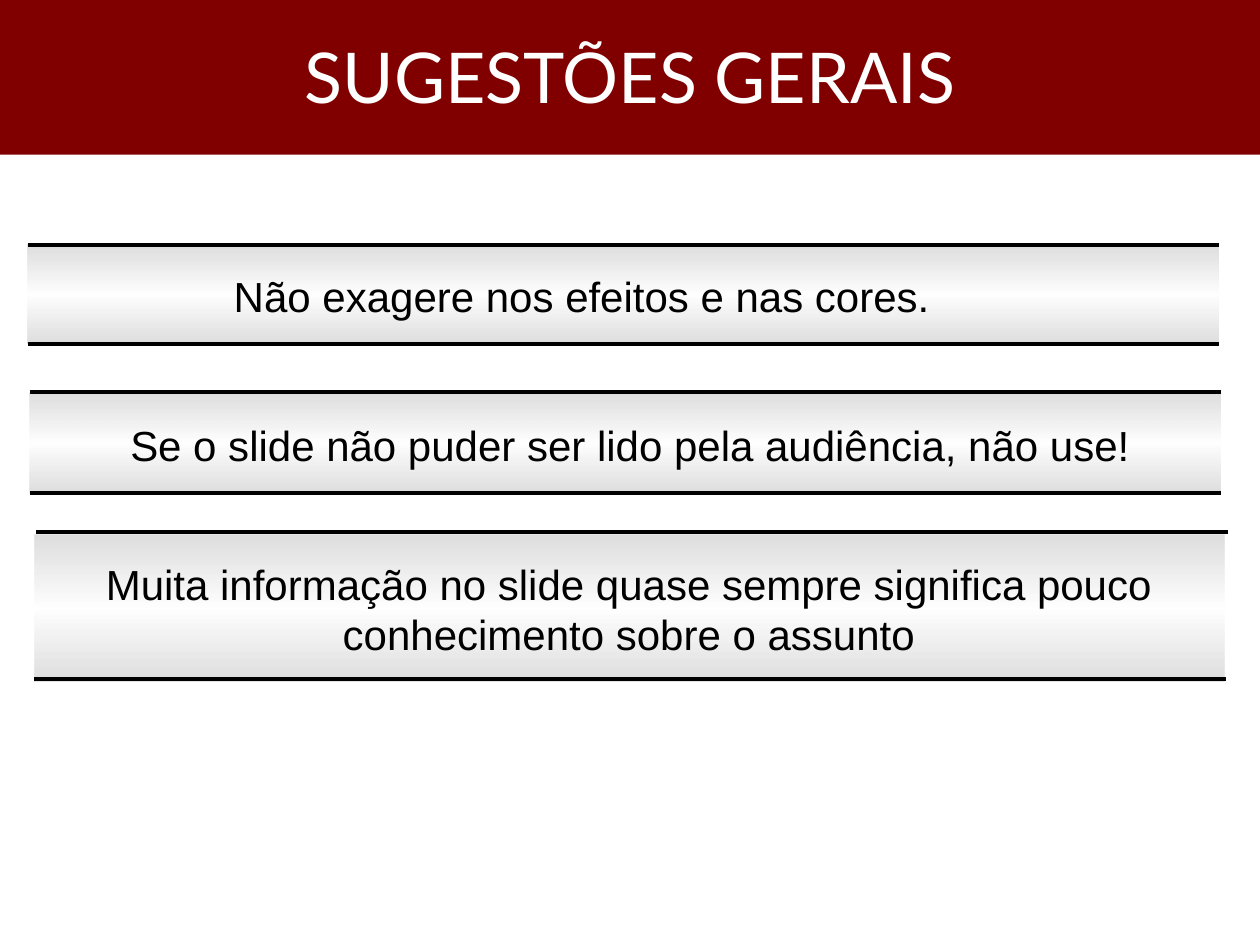
from lxml.etree import SubElement
from pptx import Presentation
from pptx.dml.color import RGBColor
from pptx.enum.shapes import MSO_CONNECTOR, MSO_SHAPE
from pptx.enum.text import MSO_ANCHOR, PP_ALIGN
from pptx.oxml.ns import qn
from pptx.util import Cm, Pt

COLORS = {
    "banner": "800000",
    "title": "FFFFFF",
    "text": "000000",
    "rule": "000000",
    "edge": "D5D5D5",
    "center": "FFFFFF",
}
BAR_WIDTH = 24
RULE_WIDTH = 24.02


class SlideBuilder:
    def __init__(self, slide):
        self.slide = slide

    def color(self, name):
        return RGBColor.from_string(COLORS[name])

    def rectangle(self, left, top, width, height):
        shape = self.slide.shapes.add_shape(
            MSO_SHAPE.RECTANGLE, Cm(left), Cm(top), Cm(width), Cm(height))
        shape.shadow.inherit = False
        shape.line.fill.background()
        return shape

    def set_text(self, shape, text, font, size, color):
        text_frame = shape.text_frame
        text_frame.word_wrap = True
        text_frame.text = text
        paragraph = text_frame.paragraphs[0]
        paragraph.alignment = PP_ALIGN.CENTER
        run_font = paragraph.runs[0].font
        run_font.name = font
        run_font.size = Pt(size)
        run_font.color.rgb = self.color(color)

    def banner(self, text, left, top, width, height):
        shape = self.rectangle(left, top, width, height)
        shape.fill.solid()
        shape.fill.fore_color.rgb = self.color("banner")
        shape.text_frame.vertical_anchor = MSO_ANCHOR.MIDDLE
        self.set_text(shape, text, "Lato", 40, "title")

    def bar(self, left, top, height):
        shape = self.rectangle(left, top, BAR_WIDTH, height)
        shape.fill.gradient()
        shape.fill.gradient_angle = 270
        stops = shape.element.spPr.find(qn("a:gradFill")).find(qn("a:gsLst"))
        for stop in list(stops):
            stops.remove(stop)
        for position, name, opacity in ((0, "edge", 80), (50, "center", 81), (100, "edge", 80)):
            stop = SubElement(stops, qn("a:gs"), pos=str(position * 1000))
            color = SubElement(stop, qn("a:srgbClr"), val=COLORS[name])
            SubElement(color, qn("a:alpha"), val=str(opacity * 1000))

    def rule(self, left, top):
        connector = self.slide.shapes.add_connector(
            MSO_CONNECTOR.STRAIGHT, Cm(left), Cm(top), Cm(left + RULE_WIDTH), Cm(top))
        connector.line.color.rgb = self.color("rule")
        connector.line.width = Pt(2.25)
        SubElement(connector.element.spPr, qn("a:effectLst"))

    def label(self, text, left, top, width, height):
        shape = self.slide.shapes.add_textbox(Cm(left), Cm(top), Cm(width), Cm(height))
        self.set_text(shape, text, "Arial", 24, "text")

    def suggestion(self, text, bar, label, rules):
        self.bar(*bar)
        self.label(text, *label)
        for left, top in rules:
            self.rule(left, top)


def main():
    presentation = Presentation()
    presentation.slide_width = Cm(25.4)
    presentation.slide_height = Cm(19.05)
    builder = SlideBuilder(presentation.slides.add_slide(presentation.slide_layouts[6]))

    builder.suggestion(
        "Muita informação no slide quase sempre significa pouco conhecimento sobre o assunto",
        (0.69, 10.77, 2.97), (1.37, 11.13, 22.61, 2.29), ((0.69, 13.69), (0.73, 10.72)))
    builder.banner("SUGESTÕES GERAIS", 0, -0.08, 25.4, 3.2)
    builder.suggestion(
        "Não exagere nos efeitos e nas cores.",
        (0.56, 4.93, 2), (0.56, 5.33, 22.33, 1.27), ((0.56, 6.93), (0.56, 4.93)))
    builder.suggestion(
        "Se o slide não puder ser lido pela audiência, não use!",
        (0.6, 7.92, 2), (0.6, 8.33, 24.2, 1.27), ((0.6, 9.93), (0.6, 7.9)))
    presentation.save("out.pptx")


if __name__ == "__main__":
    main()
